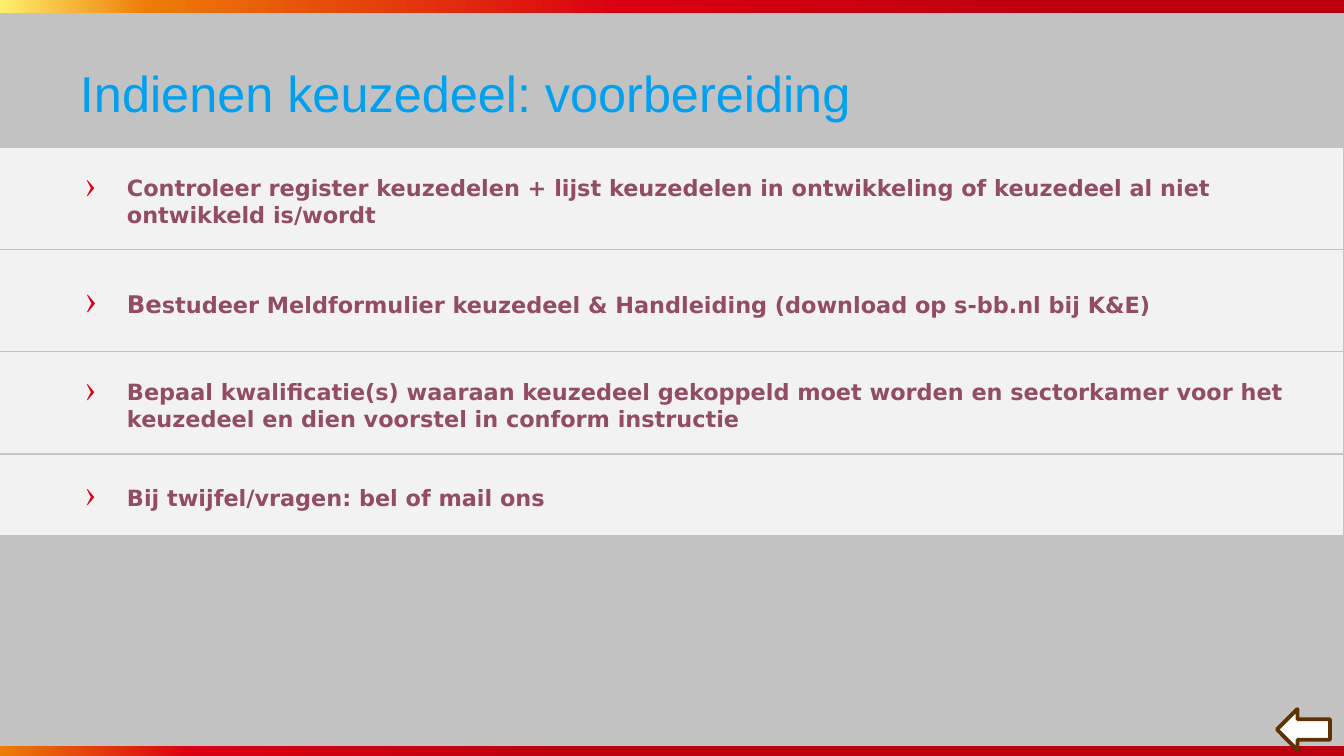
from lxml.etree import SubElement
from pptx import Presentation
from pptx.dml.color import RGBColor
from pptx.enum.shapes import MSO_SHAPE
from pptx.enum.text import MSO_ANCHOR, PP_ALIGN
from pptx.oxml.ns import qn
from pptx.util import Pt

EMU_PER_PX = 6804
SLIDE_WIDTH, SLIDE_HEIGHT = 1344, 756

GREY = RGBColor(0xC2, 0xC2, 0xC2)
LIGHT = RGBColor(0xF2, 0xF2, 0xF2)
WHITE = RGBColor(0xFF, 0xFF, 0xFF)
BLUE = RGBColor(0x00, 0xA0, 0xF0)
PLUM = RGBColor(0x92, 0x4C, 0x65)
BROWN = RGBColor(0x5F, 0x33, 0x01)
DARK_RED = RGBColor(0xBA, 0x00, 0x0E)
RED = RGBColor(0xDA, 0x00, 0x11)
ORANGE = RGBColor(0xED, 0x7C, 0x07)
YELLOW = RGBColor(0xFF, 0xEE, 0x6B)

TOP_STOPS = [(18, DARK_RED), (54, RED), (89, ORANGE), (100, YELLOW)]
BOTTOM_STOPS = [(56, DARK_RED), (86, RED), (100, ORANGE)]

ROWS_TOP = 148
ROWS = [
    (102, [("Controleer register keuzedelen + lijst keuzedelen in ontwikkeling "
            "of keuzedeel al niet ontwikkeld is/wordt", 12)]),
    (102, [("Be", 13),
           ("studeer Meldformulier keuzedeel & Handleiding "
            "(download op s-bb.nl bij K&E)", 12)]),
    (102, [("Bepaal kwalificatie(s) waaraan keuzedeel gekoppeld moet worden en "
            "sectorkamer voor het keuzedeel en dien voorstel in conform instructie", 12)]),
    (82, [("Bij twijfel/vragen: bel of mail ons", 12)]),
]


def px(length):
    return length * EMU_PER_PX


def add_plain_shape(slide, kind, left, top, width, height):
    shape = slide.shapes.add_shape(kind, px(left), px(top), px(width), px(height))
    shape.shadow.inherit = False
    return shape


def paint(shape, fill, line, line_width):
    shape.fill.solid()
    shape.fill.fore_color.rgb = fill
    shape.line.color.rgb = line
    shape.line.width = Pt(line_width)


def add_run(paragraph, text, size, name, color, bold=False):
    run = paragraph.add_run()
    run.text = text
    run.font.size = Pt(size)
    run.font.name = name
    run.font.bold = bold
    run.font.color.rgb = color


def set_insets(text_frame, left, top, right, bottom):
    text_frame.margin_left = px(left)
    text_frame.margin_top = px(top)
    text_frame.margin_right = px(right)
    text_frame.margin_bottom = px(bottom)
    text_frame.vertical_anchor = MSO_ANCHOR.MIDDLE
    text_frame.word_wrap = True


def add_gradient_bar(slide, top, height, stops):
    bar = add_plain_shape(slide, MSO_SHAPE.RECTANGLE, 0, top, SLIDE_WIDTH, height)
    bar.line.fill.background()
    bar.fill.gradient()
    bar.fill.gradient_angle = 180
    stop_list = bar.element.spPr.find(".//" + qn("a:gsLst"))
    for old_stop in list(stop_list):
        stop_list.remove(old_stop)
    for position, color in stops:
        stop = SubElement(stop_list, qn("a:gs"), pos=str(position * 1000))
        SubElement(stop, qn("a:srgbClr"), val=str(color))


def add_title(slide, text):
    box = slide.shapes.add_textbox(px(67), px(60), px(1210), px(65))
    set_insets(box.text_frame, 13, 7, 13, 7)
    add_run(box.text_frame.paragraphs[0], text, 27, "Arial", BLUE)


def add_bullet(paragraph):
    properties = paragraph._p.get_or_add_pPr()
    properties.set("marL", str(px(42)))
    properties.set("indent", str(px(-42)))
    color = SubElement(properties, qn("a:buClr"))
    SubElement(color, qn("a:srgbClr"), val=str(RED))
    SubElement(properties, qn("a:buSzPct"), val="155000")
    SubElement(properties, qn("a:buChar"), char="›")


def add_row(slide, top, height, runs):
    row = add_plain_shape(slide, MSO_SHAPE.RECTANGLE, 0, top, SLIDE_WIDTH, height)
    paint(row, LIGHT, GREY, 0.5)
    set_insets(row.text_frame, 85, 16, 13, 11)
    paragraph = row.text_frame.paragraphs[0]
    paragraph.alignment = PP_ALIGN.LEFT
    add_bullet(paragraph)
    for text, size in runs:
        add_run(paragraph, text, size, "DejaVu Sans", PLUM, bold=True)


def add_back_arrow(slide):
    arrow = add_plain_shape(slide, MSO_SHAPE.LEFT_ARROW, 1277, 709, 53, 41)
    paint(arrow, WHITE, BROWN, 2)


def main():
    presentation = Presentation()
    presentation.slide_width = px(SLIDE_WIDTH)
    presentation.slide_height = px(SLIDE_HEIGHT)
    slide = presentation.slides.add_slide(presentation.slide_layouts[6])
    slide.background.fill.solid()
    slide.background.fill.fore_color.rgb = GREY

    add_gradient_bar(slide, 0, 13, TOP_STOPS)
    add_gradient_bar(slide, 746, 13, BOTTOM_STOPS)
    add_title(slide, "Indienen keuzedeel: voorbereiding")
    top = ROWS_TOP
    for height, runs in ROWS:
        add_row(slide, top, height, runs)
        top += height
    add_back_arrow(slide)
    presentation.save("out.pptx")


if __name__ == "__main__":
    main()
